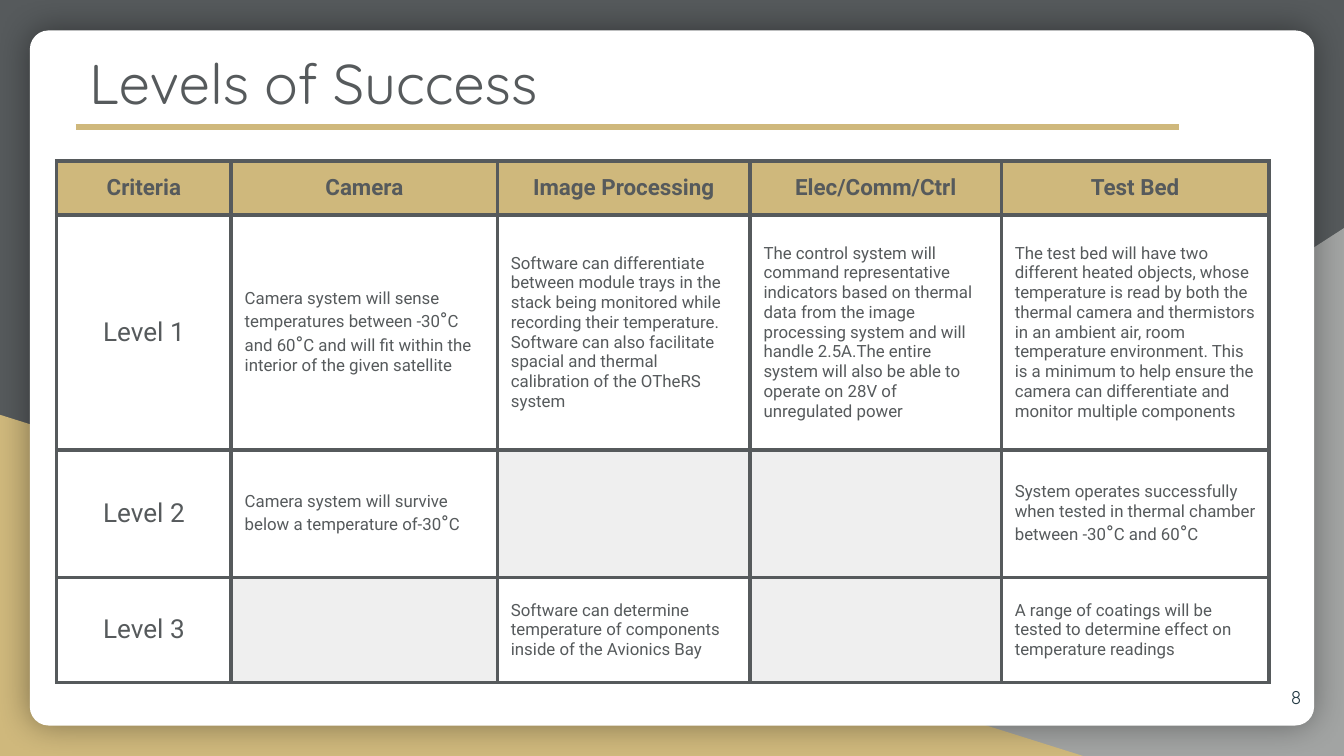
import pptx
import pptx.util
import pptx.dml.color
import pptx.enum.shapes
import pptx.enum.text
from lxml import etree

Pt = pptx.util.Pt
RGBColor = pptx.dml.color.RGBColor
Preset = pptx.enum.shapes.MSO_SHAPE
Align = pptx.enum.text.PP_ALIGN
Anchor = pptx.enum.text.MSO_ANCHOR

SLATE = RGBColor(0x56, 0x5A, 0x5C)
GOLD = RGBColor(0xCF, 0xB8, 0x7C)
SILVER = RGBColor(0xA2, 0xA4, 0xA3)
WHITE = RGBColor(0xFF, 0xFF, 0xFF)
PALE = RGBColor(0xEF, 0xEF, 0xEF)
NAVY = RGBColor(0x23, 0x3A, 0x44)

TITLE = "Levels of Success"
PAGE = "8"
HEADINGS = ["Criteria", "Camera", "Image Processing", "Elec/Comm/Ctrl", "Test Bed"]
LEVELS = [
    ["Level 1",
     "Camera system will sense temperatures between -30°C and 60°C and will fit within "
     "the interior of the given satellite",
     "Software can differentiate between module trays in the stack being monitored while "
     "recording their temperature. Software can also facilitate spacial and thermal "
     "calibration of the OTheRS system",
     "The control system will command representative indicators based on thermal data from "
     "the image processing system and will handle 2.5A.The entire system will also be able "
     "to operate on 28V of unregulated power",
     "The test bed will have two different heated objects, whose temperature is read by both "
     "the thermal camera and thermistors in an ambient air, room temperature environment. "
     "This is a minimum to help ensure the camera can differentiate and monitor multiple "
     "components"],
    ["Level 2",
     "Camera system will survive below a temperature of-30°C",
     "",
     "",
     "System operates successfully when tested in thermal chamber between -30°C and 60°C"],
    ["Level 3",
     "",
     "Software can determine temperature of components inside of the Avionics Bay",
     "",
     "A range of coatings will be tested to determine effect on temperature readings"],
]
COLUMN_WIDTHS = [93.6, 142.6, 135.4, 134.6, 143.3]
ROW_HEIGHTS = [28.8, 126, 68.4, 56.2]
INSET = 7.2
DML = "http://schemas.openxmlformats.org/drawingml/2006/main"


def add_node(parent, tag, **attributes):
    return etree.SubElement(parent, f"{{{DML}}}{tag}", attributes)


def add_run(paragraph, text, size, font, color, bold=False):
    run = paragraph.add_run()
    run.text = text
    run.font.size = Pt(size)
    run.font.name = font
    run.font.bold = bold
    run.font.color.rgb = color


def add_panel(slide, preset, box, color):
    panel = slide.shapes.add_shape(preset, *map(Pt, box))
    panel.shadow.inherit = False
    panel.fill.solid()
    panel.fill.fore_color.rgb = color
    panel.line.fill.background()
    return panel


def add_label(slide, box, text, size, color, align, anchor):
    frame = slide.shapes.add_textbox(*map(Pt, box)).text_frame
    frame.word_wrap = True
    frame.vertical_anchor = anchor
    frame.margin_left = frame.margin_right = Pt(INSET)
    frame.margin_top = frame.margin_bottom = Pt(INSET)
    frame.paragraphs[0].alignment = align
    add_run(frame.paragraphs[0], text, size, "Quicksand", color)


def add_backdrop(slide):
    slide.background.fill.solid()
    slide.background.fill.fore_color.rgb = SLATE
    silver_corner = add_panel(slide, Preset.RIGHT_TRIANGLE, (282.2, 122.2, 437.8, 282.8), SILVER)
    silver_corner._element.spPr.xfrm.set("flipH", "1")
    add_panel(slide, Preset.RIGHT_TRIANGLE, (0, 222.2, 580.3, 182.8), GOLD)
    card = add_panel(slide, Preset.ROUNDED_RECTANGLE, (16, 16.3, 688, 372.4), WHITE)
    card.adjustments[0] = 0.027
    effects = card._element.spPr.find(f"{{{DML}}}effectLst")
    glow = add_node(effects, "outerShdw", blurRad=str(Pt(18)), dist="0", dir="0",
                    algn="ctr", rotWithShape="0")
    add_node(add_node(glow, "srgbClr", val="000000"), "alpha", val="40000")
    rule = slide.shapes.add_connector(pptx.enum.shapes.MSO_CONNECTOR.STRAIGHT,
                                      Pt(40.6), Pt(68.2), Pt(631.6), Pt(68.2))
    rule.line.color.rgb = GOLD
    rule.line.width = Pt(3)
    add_node(rule._element.spPr, "effectLst")


def style_cell(cell, color):
    properties = cell._tc.get_or_add_tcPr()
    for side in ("lnL", "lnR", "lnT", "lnB"):
        border = add_node(properties, side, w=str(Pt(2.25)))
        add_node(add_node(border, "solidFill"), "srgbClr", val=str(SLATE))
    cell.fill.solid()
    cell.fill.fore_color.rgb = color
    cell.vertical_anchor = Anchor.MIDDLE
    cell.margin_left = cell.margin_right = Pt(INSET)
    cell.margin_top = cell.margin_bottom = Pt(INSET)


def write_criterion(paragraph, text):
    for index, part in enumerate(text.split("°")):
        if index:
            add_run(paragraph, "°", 11, "Roboto", SLATE)
        add_run(paragraph, part, 9, "Roboto", SLATE)


def add_levels(slide):
    grid = slide.shapes.add_table(len(ROW_HEIGHTS), len(COLUMN_WIDTHS), Pt(30.3), Pt(86.2),
                                  Pt(sum(COLUMN_WIDTHS)), Pt(sum(ROW_HEIGHTS))).table
    for column, width in zip(grid.columns, COLUMN_WIDTHS):
        column.width = Pt(width)
    for row, height in zip(grid.rows, ROW_HEIGHTS):
        row.height = Pt(height)
    for r, texts in enumerate([HEADINGS] + LEVELS):
        for c, text in enumerate(texts):
            cell = grid.cell(r, c)
            style_cell(cell, GOLD if r == 0 else WHITE if text else PALE)
            if not text:
                continue
            paragraph = cell.text_frame.paragraphs[0]
            paragraph.alignment = Align.CENTER if r == 0 or c == 0 else Align.LEFT
            if r == 0:
                add_run(paragraph, text, 12, "Roboto", SLATE, bold=True)
                continue
            paragraph.space_after = Pt(5)
            if c == 0:
                add_run(paragraph, text, 14, "Roboto", SLATE)
            else:
                write_criterion(paragraph, text)


def main():
    deck = pptx.Presentation()
    deck.slide_width, deck.slide_height = Pt(720), Pt(405)
    slide = deck.slides.add_slide(deck.slide_layouts[6])
    add_backdrop(slide)
    add_label(slide, (40.6, 18.7, 591, 49.5), TITLE, 30, SLATE, Align.LEFT, Anchor.TOP)
    add_label(slide, (661, 357.8, 43.2, 31), PAGE, 10, NAVY, Align.RIGHT, Anchor.MIDDLE)
    add_levels(slide)
    deck.save("out.pptx")


if __name__ == "__main__":
    main()
